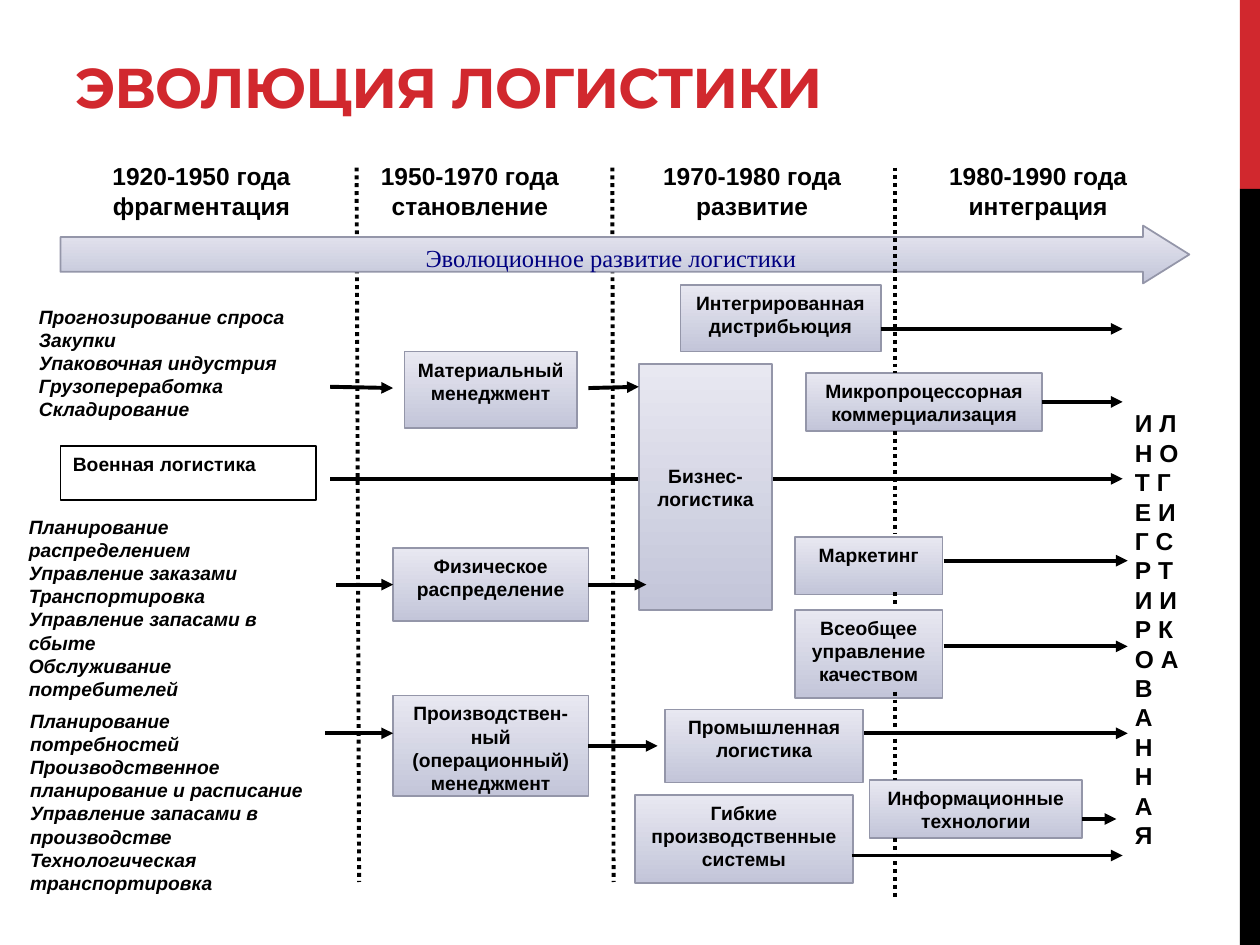
from lxml import etree
from pptx import Presentation
from pptx.dml.color import RGBColor
from pptx.enum.dml import MSO_LINE
from pptx.enum.shapes import MSO_CONNECTOR, MSO_SHAPE
from pptx.enum.text import MSO_ANCHOR, PP_ALIGN
from pptx.oxml.ns import qn
from pptx.util import Inches, Pt

rgb = RGBColor.from_string
RED, BLACK, WHITE, NAVY = "D1282E", "000000", "FFFFFF", "000080"
BOX_DARK, BOX_LIGHT, BOX_EDGE = "C3C5D9", "E8E8F1", "9496A9"

prs = Presentation()
prs.slide_width, prs.slide_height = Inches(10), Inches(7.5)
slide = prs.slides.add_slide(prs.slide_layouts[6])
CELL = prs.slide_width / 100  # square grid: 100 columns by 75 rows


def add_block(box, lines=(), preset=None, fill=None, edge=None, edge_width=1, size=11,
              face="Arial", color=BLACK, bold=True, italic=False, align=PP_ALIGN.LEFT):
    """Text box or preset shape; box is left, top, width, height in grid cells."""
    frame = [int(v * CELL) for v in box]
    if preset is None:
        block = slide.shapes.add_textbox(*frame)
    else:
        block = slide.shapes.add_shape(preset, *frame)
        block.shadow.inherit = False
        if fill:
            block.fill.solid()
            block.fill.fore_color.rgb = rgb(fill)
        else:
            block.fill.gradient()
            block.fill.gradient_angle = 90
            for stop, tone in zip(block.fill.gradient_stops, (BOX_DARK, BOX_LIGHT)):
                stop.color.rgb = rgb(tone)
        if edge:
            block.line.color.rgb = rgb(edge)
            block.line.width = Pt(edge_width)
        else:
            block.line.fill.background()
    text = block.text_frame
    text.word_wrap = True
    text.vertical_anchor = MSO_ANCHOR.TOP
    text.text = "\n".join(lines)
    for paragraph in text.paragraphs:
        paragraph.alignment = align
        font = paragraph.font
        font.name, font.size, font.bold, font.italic = face, Pt(size), bold, italic
        font.color.rgb = rgb(color)
    return block


def add_line(x1, y1, x2, y2, arrow=True):
    """Solid arrow, or a dotted divider when arrow is False."""
    line = slide.shapes.add_connector(
        MSO_CONNECTOR.STRAIGHT, *[int(v * CELL) for v in (x1, y1, x2, y2)])
    line.line.color.rgb = rgb(BLACK)
    line.line.width = Pt(2.25)
    if arrow:
        etree.SubElement(line.line._get_or_add_ln(), qn("a:tailEnd"), type="triangle")
    else:
        line.line.dash_style = MSO_LINE.ROUND_DOT
    etree.SubElement(line._element.spPr, qn("a:effectLst"))
    return line


# Side strip
add_block((98.4, 0, 1.6, 15), preset=MSO_SHAPE.RECTANGLE, fill=RED)
add_block((98.4, 15, 1.6, 60), preset=MSO_SHAPE.RECTANGLE, fill=BLACK)

# Title
title = add_block((5, 1.7, 80.6, 8.3), ["ЭВОЛЮЦИЯ ЛОГИСТИКИ"], size=32,
                  face="Montserrat", color=RED)
title.text_frame.vertical_anchor = MSO_ANCHOR.BOTTOM
title.text_frame.paragraphs[0].runs[0].font._element.set("spc", "-60")

# Period headings
HEADING_WIDTH = 18
for center, years, stage in [
    (16, "1920-1950 года", "фрагментация"),
    (37.3, "1950-1970 года", "становление"),
    (59.7, "1970-1980 года", "развитие"),
    (82.4, "1980-1990 года", "интеграция"),
]:
    add_block((center - HEADING_WIDTH / 2, 12.3, HEADING_WIDTH, 5.8), [years, stage],
              size=14, align=PP_ALIGN.CENTER)

# Lines that run behind the boxes
add_line(28.3, 13.3, 28.5, 70, arrow=False)
add_line(48.6, 13.3, 48.7, 70, arrow=False)
add_line(26.2, 38, 89.1, 38)

# Timeline arrow
timeline = add_block((4.8, 17.9, 89.6, 4.6), ["Эволюционное развитие логистики"],
                     preset=MSO_SHAPE.RIGHT_ARROW, edge=BOX_EDGE, size=14,
                     face="Times New Roman", color=NAVY, bold=False, align=PP_ALIGN.CENTER)
timeline.adjustments[0], timeline.adjustments[1] = 0.6, 0.8

# Concept boxes
concepts = {}
for concept, box in [
    ("Материальный менеджмент", (32.1, 27.9, 13.7, 6.1)),
    ("Производствен-ный (операционный) менеджмент", (31.2, 55.2, 15.5, 8)),
    ("Физическое распределение", (31.2, 43.5, 15.5, 5.8)),
    ("Маркетинг", (63.1, 42.6, 11.7, 4.6)),
    ("Всеобщее управление качеством", (63.1, 48.4, 11.7, 7)),
    ("Промышленная логистика", (52.8, 56.3, 15.7, 5.8)),
    ("Интегрированная дистрибьюция", (54, 22.6, 15.9, 5.3)),
    ("Гибкие производственные системы", (50.4, 63.1, 17.3, 7)),
    ("Микропроцессорная коммерциализация", (64, 29.6, 18.7, 4.6)),
    ("Информационные технологии", (69, 61.9, 16.9, 4.6)),
    ("Бизнес-логистика", (50.7, 28.9, 10.6, 19.5)),
]:
    concepts[concept] = add_block(box, [concept], preset=MSO_SHAPE.RECTANGLE,
                                  edge=BOX_EDGE, align=PP_ALIGN.CENTER)
concepts["Бизнес-логистика"].text_frame.vertical_anchor = MSO_ANCHOR.MIDDLE

# Third divider, broken by the boxes
for top, bottom in [(13.3, 29.6), (34.2, 42.3), (47, 48.1), (54.9, 61.9), (66.5, 71.2)]:
    add_line(71, top, 71, bottom, arrow=False)

# Free arrows
for ends in [
    (26.2, 30.7, 31.2, 30.8),
    (46.7, 30.8, 50.7, 30.7),
    (25.8, 58.2, 31.2, 58.2),
    (69.9, 26.1, 89.1, 26.1),
    (74.9, 44.5, 89.5, 44.5),
    (74.9, 51.3, 89.5, 51.3),
    (68.6, 58.2, 89.5, 58.2),
    (67.6, 67.9, 89.1, 67.9),
    (85.9, 65, 88.6, 65),
]:
    add_line(*ends)

# Arrows joined to the middle of a box side
physical = concepts["Физическое распределение"]
add_line(26.7, 46.4, 31.2, 46.4).end_connect(physical, 1)
add_line(46.7, 46.4, 51.3, 46.4).begin_connect(physical, 3)
add_line(46.7, 59.2, 52.2, 59.2).begin_connect(
    concepts["Производствен-ный (операционный) менеджмент"], 3)
add_line(82.7, 31.9, 89.1, 31.9).begin_connect(
    concepts["Микропроцессорная коммерциализация"], 3)

# Source activities on the left
add_block((4.8, 35.4, 20.3, 4.3), ["Военная логистика"], preset=MSO_SHAPE.RECTANGLE,
          fill=WHITE, edge=BLACK, edge_width=0.75)
for box, activities in [
    ((2.1, 23.7, 24.2, 10.3), [
        "Прогнозирование спроса", "Закупки", "Упаковочная индустрия",
        "Грузопереработка Складирование"]),
    ((1.3, 40.4, 24.2, 14.8), [
        "Планирование распределением", "Управление заказами", "Транспортировка",
        "Управление запасами в сбыте", "Обслуживание потребителей"]),
    ((1.4, 55.8, 24.2, 15.3), [
        "Планирование потребностей", "Производственное планирование и расписание",
        "Управление запасами в производстве", "Технологическая транспортировка"]),
]:
    add_block(box, activities, italic=True)

# Two words read downwards on the right
outcome = add_block((89.1, 24.9, 6.6, 46.5), [
    "И Л", "Н О", "Т Г", "Е И", "Г С", "Р Т", "И И", "Р К", "О А",
    "В", "А", "Н", "Н", "А", "Я"], size=14)
outcome.text_frame.margin_top = int(7.5 * CELL)

prs.save("out.pptx")
